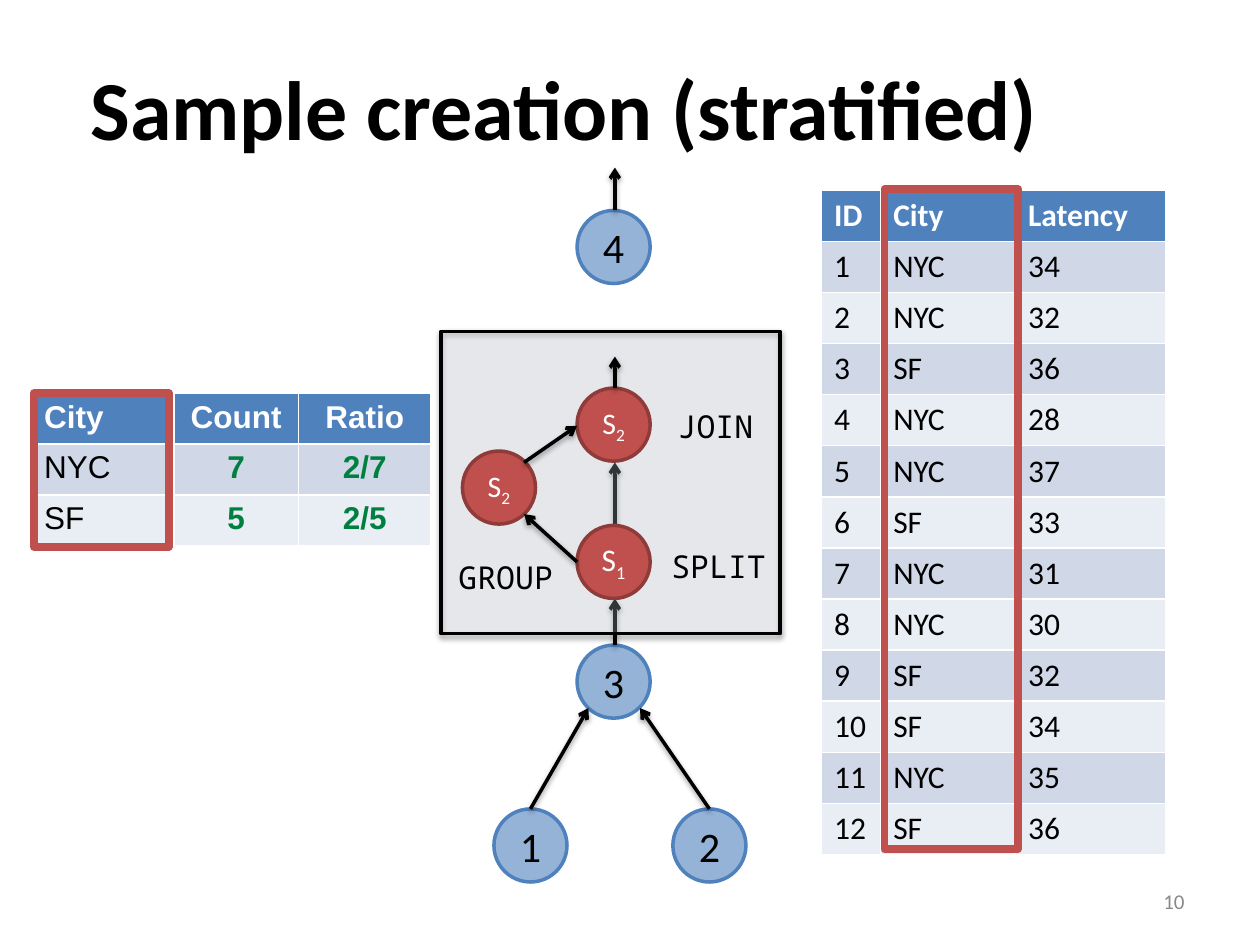
from typing import NamedTuple

from lxml import etree
from pptx import Presentation
from pptx.dml.color import RGBColor
from pptx.enum import shapes, text
from pptx.oxml import parse_xml
from pptx.oxml.ns import nsdecls, qn
from pptx.util import Inches, Pt

BLACK, WHITE, GREEN = "000000", "FFFFFF", "008040"
BLUE, RED = "4F81BD", "C0504D"
BANDS = ("D0D8E8", "E9EDF4")
NODE_SIZE = 0.58
ROW_HEIGHT = 0.405
LEFT, CENTER, RIGHT = text.PP_ALIGN.LEFT, text.PP_ALIGN.CENTER, text.PP_ALIGN.RIGHT


class Node(NamedTuple):
    left: float
    top: float
    label: str
    subscript: str = ""
    size: int = 24
    fill: str = "95B3D7"
    outline: str = BLUE
    color: str = BLACK


class Arrow(NamedTuple):
    x1: float
    y1: float
    x2: float
    y2: float


class Label(NamedTuple):
    left: float
    top: float
    width: float
    height: float
    words: str
    size: int = 18
    font: str = "Noto Sans Mono"
    color: str = BLACK
    bold: bool = False
    align: text.PP_ALIGN = LEFT
    middle: bool = False
    wrap: bool = False


class Grid(NamedTuple):
    left: float
    top: float
    widths: tuple
    rows: list
    font: str
    stats: bool = False  # columns after the first are centred, bold and green


class Frame(NamedTuple):
    left: float
    top: float
    width: float
    height: float


INPUT_NODES = [
    Node(5.34, 6.42, "2"),
    Node(4.58, 1.67, "4"),
    Node(3.92, 6.42, "1"),
    Node(4.58, 5.12, "3"),
]
SAMPLER = {"fill": RED, "outline": "8E3B39", "color": WHITE}
SAMPLER_NODES = [
    Node(4.58, 4.17, "S", "1", 18, **SAMPLER),
    Node(3.67, 3.58, "S", "2", 17, **SAMPLER),
    Node(4.58, 3.08, "S", "2", 17, **SAMPLER),
]
ARROWS_BEHIND = [
    Arrow(4.21, 6.42, 4.67, 5.62),
    Arrow(5.63, 6.42, 5.08, 5.62),
    Arrow(4.88, 5.12, 4.88, 4.75),
    Arrow(4.88, 4.17, 4.88, 3.67),
    Arrow(4.88, 1.67, 4.88, 1.33),
]
ARROWS_IN_FRONT = [
    Arrow(4.58, 4.46, 4.16, 4.08),
    Arrow(4.16, 3.67, 4.58, 3.38),
    Arrow(4.88, 3.08, 4.88, 2.83),
]
CITIES = "NYC NYC SF NYC NYC SF NYC NYC SF SF NYC SF".split()
LATENCIES = (34, 32, 36, 28, 37, 33, 31, 30, 32, 34, 35, 36)
RECORDS = [(i, *record) for i, record in enumerate(zip(CITIES, LATENCIES), 1)]
GRIDS = [
    Grid(0.25, 3.12, (1.13, 0.99, 1.05),
         [("City", "Count", "Ratio"), ("NYC", "7", "2/7"), ("SF", "5", "2/5")],
         "Arial", True),
    Grid(6.52, 1.51, (0.47, 1.07, 1.19), [("ID", "City", "Latency"), *RECORDS], "Calibri"),
]
CITY_FRAMES = [Frame(0.27, 3.12, 1.07, 1.22), Frame(7.02, 1.5, 1.06, 5.24)]
LABELS = [
    Label(5.28, 3.18, 0.81, 0.4, "JOIN"),
    Label(5.23, 4.29, 0.96, 0.4, "SPLIT"),
    Label(3.54, 4.38, 1, 0.4, "GROUP", wrap=True),
    Label(0.62, 0.22, 9, 1.25, "Sample creation (stratified)", 48, "Calibri",
          bold=True, middle=True, wrap=True),
    Label(7.17, 6.95, 2.33, 0.4, "10", 12, "Calibri", "898989",
          align=RIGHT, middle=True, wrap=True),
]


def rgb(value: str) -> RGBColor:
    return RGBColor.from_string(value)


def set_fill(target, color: str) -> None:
    target.fill.solid()
    target.fill.fore_color.rgb = rgb(color)


def set_line(target, color: str, points: float) -> None:
    target.line.color.rgb = rgb(color)
    target.line.width = Pt(points)


def add_run(paragraph, words: str, color: str, **formats):
    run = paragraph.add_run()
    run.text = words
    run.font.color.rgb = rgb(color)
    for name, value in formats.items():
        setattr(run.font, name, value)
    return run


def cast_shadow(target) -> None:
    """Replace the theme effect by a soft shadow below the element."""
    properties = target._element.spPr
    for old in properties.findall(qn("a:effectLst")):
        properties.remove(old)
    properties.append(parse_xml(
        f'<a:effectLst {nsdecls("a")}>'
        '<a:outerShdw blurRad="40000" dist="20000" dir="5400000" rotWithShape="0">'
        '<a:srgbClr val="000000"><a:alpha val="38000"/></a:srgbClr>'
        '</a:outerShdw></a:effectLst>'))


def add_node(slide, node: Node) -> None:
    circle = slide.shapes.add_shape(
        shapes.MSO_SHAPE.OVAL, Inches(node.left), Inches(node.top),
        Inches(NODE_SIZE), Inches(NODE_SIZE))
    circle.shadow.inherit = False
    set_fill(circle, node.fill)
    set_line(circle, node.outline, 2)
    frame = circle.text_frame
    frame.word_wrap = False
    frame.vertical_anchor = text.MSO_ANCHOR.MIDDLE
    paragraph = frame.paragraphs[0]
    paragraph.alignment = CENTER
    formats = {"name": "Calibri", "size": Pt(node.size)}
    add_run(paragraph, node.label, node.color, **formats)
    if node.subscript:
        run = add_run(paragraph, node.subscript, node.color, **formats)
        run.font._element.set("baseline", "-25000")


def add_arrow(slide, arrow: Arrow) -> None:
    line = slide.shapes.add_connector(
        shapes.MSO_CONNECTOR.STRAIGHT, *(Inches(value) for value in arrow))
    set_line(line, BLACK, 2)
    etree.SubElement(line.line._get_or_add_ln(), qn("a:tailEnd"), type="arrow")
    cast_shadow(line)


def add_rectangle(slide, frame: Frame, color: str, points: float):
    rectangle = slide.shapes.add_shape(
        shapes.MSO_SHAPE.RECTANGLE, *(Inches(value) for value in frame))
    rectangle.shadow.inherit = False
    rectangle.fill.background()
    set_line(rectangle, color, points)
    return rectangle


def add_panel(slide) -> None:
    """Draw the translucent box behind the sampling steps."""
    panel = add_rectangle(slide, Frame(3.5, 2.63, 2.69, 2.4), BLACK, 2)
    set_fill(panel, "DCE6F2")
    color = panel._element.spPr.find(qn("a:solidFill"))[0]
    etree.SubElement(color, qn("a:alpha"), val="23000")
    cast_shadow(panel)


def add_label(slide, label: Label) -> None:
    box = slide.shapes.add_textbox(*(Inches(value) for value in label[:4]))
    frame = box.text_frame
    frame.word_wrap = label.wrap
    if label.middle:
        frame.vertical_anchor = text.MSO_ANCHOR.MIDDLE
    else:
        frame.auto_size = text.MSO_AUTO_SIZE.SHAPE_TO_FIT_TEXT
    paragraph = frame.paragraphs[0]
    paragraph.alignment = label.align
    add_run(paragraph, label.words, label.color,
            name=label.font, size=Pt(label.size), bold=label.bold)


def add_grid(slide, grid: Grid) -> None:
    table = slide.shapes.add_table(
        len(grid.rows), len(grid.widths), Inches(grid.left), Inches(grid.top),
        Inches(sum(grid.widths)), Inches(ROW_HEIGHT * len(grid.rows))).table
    for column, width in zip(table.columns, grid.widths):
        column.width = Inches(width)
    for r, values in enumerate(grid.rows):
        for c, value in enumerate(values):
            cell = table.cell(r, c)
            set_fill(cell, BANDS[(r - 1) % 2] if r else BLUE)
            stat = grid.stats and c > 0
            color = WHITE if r == 0 else GREEN if stat else BLACK
            paragraph = cell.text_frame.paragraphs[0]
            paragraph.alignment = CENTER if stat else LEFT
            add_run(paragraph, str(value), color,
                    name=grid.font, size=Pt(18), bold=r == 0 or stat)


def main() -> None:
    deck = Presentation()
    deck.slide_width, deck.slide_height = Inches(10), Inches(7.5)
    slide = deck.slides.add_slide(deck.slide_layouts[6])
    for node in INPUT_NODES:
        add_node(slide, node)
    for arrow in ARROWS_BEHIND:
        add_arrow(slide, arrow)
    add_panel(slide)
    for node in SAMPLER_NODES:
        add_node(slide, node)
    for arrow in ARROWS_IN_FRONT:
        add_arrow(slide, arrow)
    for grid, city_frame in zip(GRIDS, CITY_FRAMES):
        add_grid(slide, grid)
        add_rectangle(slide, city_frame, RED, 4.5)
    for label in LABELS:
        add_label(slide, label)
    deck.save("out.pptx")


if __name__ == "__main__":
    main()
